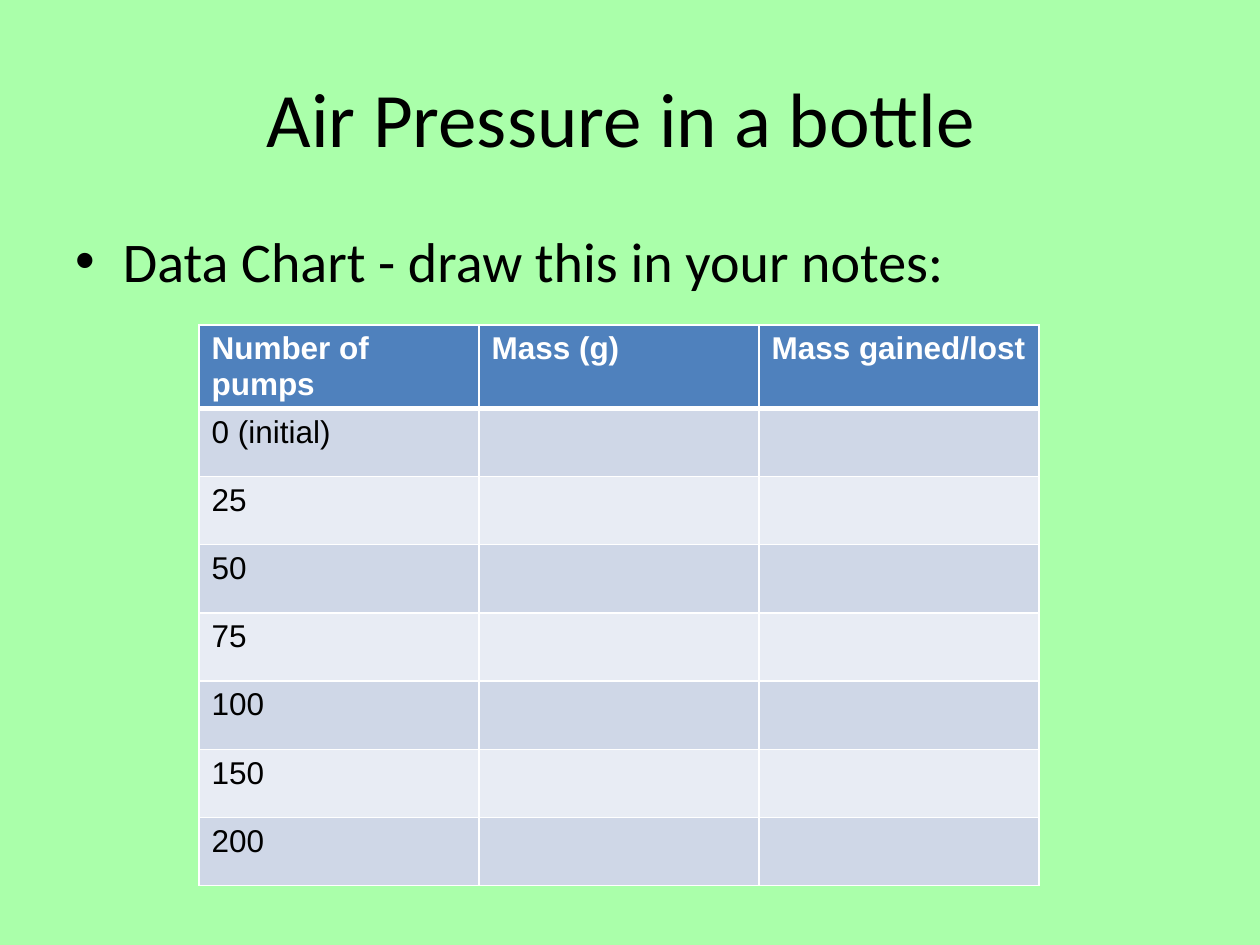
from lxml.etree import SubElement
from pptx import Presentation
from pptx.dml.color import RGBColor
from pptx.enum.text import MSO_ANCHOR, PP_ALIGN
from pptx.oxml.ns import qn
from pptx.util import Emu, Pt

TITLE = "Air Pressure in a bottle "
PROMPT = "Data Chart - draw this in your notes:"
HEADERS = ["Number of pumps", "Mass (g)", "Mass gained/lost"]
PUMPS = ["0 (initial)", "25", "50", "75", "100", "150", "200"]

BACKGROUND, BLACK, WHITE = "AAFFAA", "000000", "FFFFFF"
HEADER_FILL, BAND_FILLS = "4F81BD", ["CFD7E7", "E8ECF4"]
SLIDE_SIZE = (1260, 945)
TITLE_BOX = (63, 38, 1134, 157)
BODY_BOX = (63, 220, 1134, 624)
TABLE_BOX = (199, 325, 840, 546)


def px(length):
    return Emu(round(length * 914400 / 126))


def color(value):
    return RGBColor.from_string(value)


def format_text(text_frame, font_name, size, text_color, bold=False):
    for paragraph in text_frame.paragraphs:
        for run in paragraph.runs:
            font = run.font
            font.name, font.size, font.bold = font_name, Pt(size), bold
            font.color.rgb = color(text_color)


def fill_placeholder(shape, box, text, size):
    shape.left, shape.top, shape.width, shape.height = map(px, box)
    shape.text_frame.text = text
    format_text(shape.text_frame, "Calibri", size, BLACK)


def set_borders(cell, widths):
    properties = cell._tc.get_or_add_tcPr()
    for side, width in widths.items():
        line = SubElement(properties, qn(f"a:ln{side}"), w=str(Pt(width)))
        fill = SubElement(line, qn("a:solidFill"))
        SubElement(fill, qn("a:srgbClr"), val=WHITE)


def add_data_table(slide):
    rows = [HEADERS] + [[pumps, "", ""] for pumps in PUMPS]
    frame = slide.shapes.add_table(len(rows), len(HEADERS), *map(px, TABLE_BOX))
    for row_index, row in enumerate(rows):
        is_header = row_index == 0
        cell_fill = HEADER_FILL if is_header else BAND_FILLS[(row_index - 1) % 2]
        widths = {"L": 1, "R": 1, "T": 3 if row_index == 1 else 1, "B": 3 if is_header else 1}
        for column_index, text in enumerate(row):
            cell = frame.table.cell(row_index, column_index)
            set_borders(cell, widths)
            cell.fill.solid()
            cell.fill.fore_color.rgb = color(cell_fill)
            cell.text_frame.text = text
            format_text(cell.text_frame, "Arial", 18, WHITE if is_header else BLACK, is_header)


def main():
    presentation = Presentation()
    presentation.slide_width, presentation.slide_height = map(px, SLIDE_SIZE)
    slide = presentation.slides.add_slide(presentation.slide_layouts.get_by_name("Title and Content"))
    slide.background.fill.solid()
    slide.background.fill.fore_color.rgb = color(BACKGROUND)

    title, body = slide.placeholders
    fill_placeholder(title, TITLE_BOX, TITLE, 44)
    title.text_frame.vertical_anchor = MSO_ANCHOR.MIDDLE
    title.text_frame.paragraphs[0].alignment = PP_ALIGN.CENTER
    fill_placeholder(body, BODY_BOX, PROMPT, 32)
    add_data_table(slide)
    presentation.save("out.pptx")


if __name__ == "__main__":
    main()
